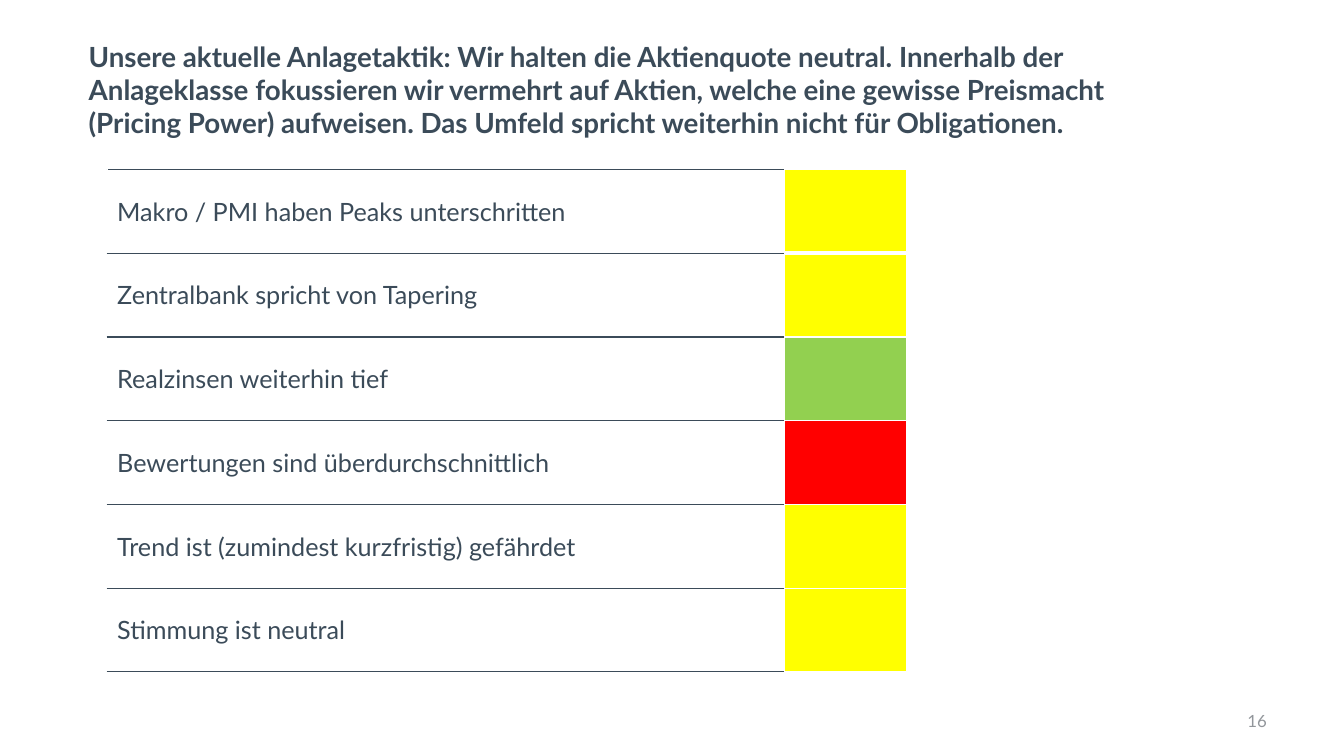
from lxml import etree
from pptx import Presentation
from pptx import util as u
from pptx.dml.color import RGBColor
from pptx.enum import text
from pptx.oxml.ns import qn

SLATE = RGBColor(0x3B, 0x4B, 0x59)
GREY = RGBColor(0x92, 0x96, 0x9B)
WHITE = RGBColor(0xFF, 0xFF, 0xFF)
YELLOW = RGBColor(0xFF, 0xFF, 0x00)
GREEN = RGBColor(0x92, 0xD0, 0x50)
RED = RGBColor(0xFF, 0x00, 0x00)

TITLE = (
    "Unsere aktuelle Anlagetaktik: Wir halten die Aktienquote neutral. "
    "Innerhalb der Anlageklasse fokussieren wir vermehrt auf Aktien, welche "
    "eine gewisse Preismacht (Pricing Power) aufweisen. Das Umfeld spricht "
    "weiterhin nicht für Obligationen."
)
SIGNALS = [
    ("Makro / PMI haben Peaks unterschritten", YELLOW),
    ("Zentralbank spricht von Tapering", YELLOW),
    ("Realzinsen weiterhin tief", GREEN),
    ("Bewertungen sind überdurchschnittlich", RED),
    ("Trend ist (zumindest kurzfristig) gefährdet", YELLOW),
    ("Stimmung ist neutral", YELLOW),
]


class PageBuilder:
    font_name = "Lato"

    def __init__(self, deck):
        self.page = deck.slides.add_slide(deck.slide_layouts[5])

    def add_words(self, para, words, size, color=SLATE, bold=False,
                  align=text.PP_ALIGN.LEFT):
        para.alignment = align
        span = para.add_run()
        span.text = words
        style = {"name": self.font_name, "size": u.Pt(size), "bold": bold}
        for key, value in style.items():
            setattr(span.font, key, value)
        span.font.color.rgb = color

    def place(self, box, left, top, width, height):
        bounds = {"left": left, "top": top, "width": width, "height": height}
        for key, value in bounds.items():
            setattr(box, key, u.Cm(value))
        frame = box.text_frame
        layout = {"word_wrap": True, "auto_size": text.MSO_AUTO_SIZE.NONE,
                  "vertical_anchor": text.MSO_ANCHOR.MIDDLE}
        for key, value in layout.items():
            setattr(frame, key, value)
        return frame.paragraphs[0]

    def title(self, words, *bounds):
        para = self.place(self.page.shapes.title, *bounds)
        self.add_words(para, words, 19.8, bold=True)

    def page_number(self, words, *bounds):
        box = self.page.shapes.add_textbox(0, 0, 0, 0)
        para = self.place(box, *bounds)
        self.add_words(para, words, 12, GREY, align=text.PP_ALIGN.RIGHT)

    def borders(self, cell, sides):
        """Draw borders from (side, colour, points), in the order L, R, T, B."""
        props = cell._tc.get_or_add_tcPr()
        for index, (side, color, points) in enumerate(sides):
            line = etree.Element(qn(f"a:ln{side}"), w=str(int(u.Pt(points))))
            fill = etree.SubElement(line, qn("a:solidFill"))
            etree.SubElement(fill, qn("a:srgbClr"), val=str(color))
            props.insert(index, line)

    def signal_table(self, signals, left, top, widths, row_height):
        frame = self.page.shapes.add_table(
            len(signals), len(widths), u.Cm(left), u.Cm(top),
            u.Cm(sum(widths)), u.Cm(row_height * len(signals)))
        table = frame.table
        table.first_row = table.horz_banding = False
        for column, width in zip(table.columns, widths):
            column.width = u.Cm(width)
        for index, (words, color) in enumerate(signals):
            table.rows[index].height = u.Cm(row_height)
            label, light = table.cell(index, 0), table.cell(index, 1)

            # Statement with rules above and below
            label.vertical_anchor = text.MSO_ANCHOR.MIDDLE
            self.add_words(label.text_frame.paragraphs[0], words, 18)
            label.fill.background()
            self.borders(label, [("L", WHITE, 1), ("R", WHITE, 1),
                                 ("T", SLATE, 1), ("B", SLATE, 1)])

            # Traffic light, with a wider gap below the first one
            light.fill.solid()
            light.fill.fore_color.rgb = color
            gap_above = 3 if index == 1 else 1
            gap_below = 3 if index == 0 else 1
            self.borders(light, [("L", WHITE, 1), ("R", WHITE, 1),
                                 ("T", WHITE, gap_above), ("B", WHITE, gap_below)])


def main():
    deck = Presentation()
    deck.slide_width, deck.slide_height = u.Cm(33.87), u.Cm(19.05)
    builder = PageBuilder(deck)
    builder.title(TITLE, 1.98, 0.66, 26.75, 3.18)
    builder.signal_table(SIGNALS, 2.7, 4.27, (17.08, 3.08), 2.11)
    builder.page_number("16", 24.28, 17.65, 7.9, 1.02)
    deck.save("out.pptx")


if __name__ == "__main__":
    main()
